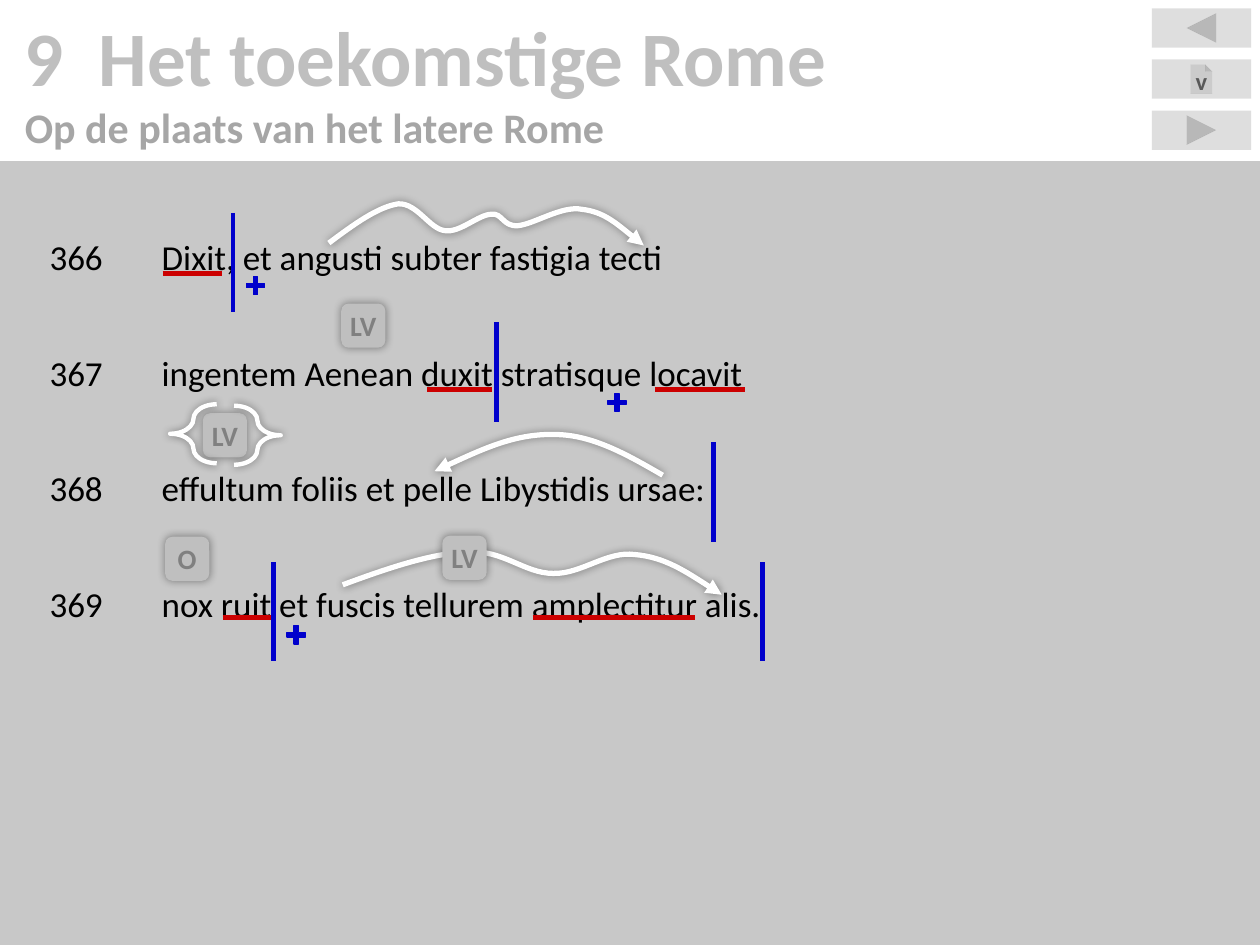
from lxml.etree import SubElement
from pptx import Presentation
from pptx.dml.color import RGBColor
from pptx.enum.shapes import MSO_CONNECTOR, MSO_SHAPE
from pptx.enum.text import MSO_ANCHOR, PP_ALIGN
from pptx.oxml.ns import qn
from pptx.util import Cm, Pt

COLORS = {
    "grey": "BFBFBF", "subtitle": "A6A6A6", "badge_text": "808080",
    "button_text": "595959", "verb": "CC0000", "clause": "0000CC",
    "white": "FFFFFF", "black": "000000",
}
VERSES = [
    "366\tDixit, et angusti subter fastigia tecti",
    "367\tingentem Aenean duxit stratisque locavit",
    "368\teffultum foliis et pelle Libystidis ursae:",
    "369\tnox ruit et fuscis tellurem amplectitur alis.",
]
# left, right, height on the slide
VERB_UNDERLINES = [(3.28, 4.47, 5.51), (8.61, 9.91, 7.85), (13.21, 15.01, 7.85),
                   (4.5, 5.51, 12.45), (10.74, 14.02, 12.45)]
CLAUSE_BARS = [(4.7, 4.29), (10.01, 6.5), (14.38, 8.92), (5.51, 11.33), (15.37, 11.33)]
PLUS_SIGNS = [(4.9, 5.51), (12.19, 7.87), (5.72, 12.55)]
BADGES = [("LV", 6.88, 6.12), ("LV", 4.09, 8.33), ("O", 3.33, 10.82), ("LV", 8.92, 10.8)]
# a start point, then two control points and an end point for each curve
ARROWS = [
    [(6.63, 4.9), (7.14, 4.52), (7.62, 4.17), (8.03, 4.11),
     (8.41, 4.09), (8.66, 4.62), (8.97, 4.65), (9.27, 4.7), (9.65, 4.32), (9.91, 4.32),
     (10.13, 4.29), (10.13, 4.57), (10.44, 4.55), (10.77, 4.52), (11.33, 4.14),
     (11.73, 4.22), (12.17, 4.27), (12.57, 4.62), (12.98, 4.95)],
    [(13.36, 9.58), (12.65, 9.17), (11.94, 8.76), (11.18, 8.76),
     (10.39, 8.74), (9.58, 9.12), (8.76, 9.5)],
    [(6.91, 11.79), (7.8, 11.46), (8.71, 11.15), (9.42, 11.13),
     (10.13, 11.07), (10.57, 11.56), (11.15, 11.56), (11.71, 11.58), (12.24, 11.1),
     (12.8, 11.18), (13.39, 11.23), (13.97, 11.61), (14.55, 11.99)],
]


def rgb(name):
    return RGBColor.from_string(COLORS[name])


def set_frame(shape, anchor=MSO_ANCHOR.TOP, horizontal=0.0, vertical=0.0):
    frame = shape.text_frame
    frame.word_wrap = True
    frame.vertical_anchor = anchor
    frame.margin_left = frame.margin_right = Cm(horizontal)
    frame.margin_top = frame.margin_bottom = Cm(vertical)


def write(shape, text, size, color, bold=False, align=PP_ALIGN.LEFT,
          space_after=None, tab=None, hanging=None):
    """Write text as the next paragraph of the shape."""
    frame = shape.text_frame
    paragraph = frame.paragraphs[0] if not frame.text else frame.add_paragraph()
    properties = paragraph._p.get_or_add_pPr()
    if tab:
        tabs = SubElement(properties, qn("a:tabLst"))
        SubElement(tabs, qn("a:tab"), pos=str(Cm(tab)), algn="l")
    if hanging:
        properties.set("marL", str(Cm(hanging)))
        properties.set("indent", str(-Cm(hanging)))
    paragraph.alignment = align
    if space_after:
        paragraph.space_after = Pt(space_after)
    run = paragraph.add_run()
    run.text = text
    run.font.name = "Calibri"
    run.font.size = Pt(size)
    run.font.bold = bold
    run.font.color.rgb = rgb(color)


def add_glow(shape):
    """Give the shape a soft black shadow without offset."""
    effects = shape._element.spPr.find(qn("a:effectLst"))
    shadow = SubElement(effects, qn("a:outerShdw"), blurRad=str(Pt(5)), dist="0", dir="0",
                        algn="ctr", rotWithShape="0")
    color = SubElement(shadow, qn("a:srgbClr"), val=COLORS["black"])
    SubElement(color, qn("a:alpha"), val="40000")


def style_shape(shape, fill=None, opacity=100, line=None, line_width=0.0, glow=False):
    shape.shadow.inherit = False
    if fill:
        shape.fill.solid()
        shape.fill.fore_color.rgb = rgb(fill)
        if opacity < 100:
            color = shape._element.spPr.find(".//" + qn("a:srgbClr"))
            SubElement(color, qn("a:alpha"), val=str(opacity * 1000))
    else:
        shape.fill.background()
    if line:
        shape.line.color.rgb = rgb(line)
        shape.line.width = Pt(line_width)
    else:
        shape.line.fill.background()
    if glow:
        add_glow(shape)


def add_figure(slide, kind, left, top, width, height, **style):
    shape = slide.shapes.add_shape(kind, Cm(left), Cm(top), Cm(width), Cm(height))
    style_shape(shape, **style)
    return shape


def add_line(slide, left, top, right, bottom, color):
    line = slide.shapes.add_connector(
        MSO_CONNECTOR.STRAIGHT, Cm(left), Cm(top), Cm(right), Cm(bottom))
    line.line.color.rgb = rgb(color)
    line.line.width = Pt(2.5)
    SubElement(line._element.spPr, qn("a:effectLst"))


def add_curved_arrow(slide, points):
    """Draw a chain of Bezier curves that ends in an arrowhead."""
    places = [(Cm(x), Cm(y)) for x, y in points]
    builder = slide.shapes.build_freeform(*places[0])
    builder.add_line_segments(places[1:], close=False)
    shape = builder.convert_to_shape()
    outline = shape._element.spPr.find(".//" + qn("a:path"))
    segments = outline.findall(qn("a:lnTo"))
    for start in range(0, len(segments), 3):
        curve = SubElement(outline, qn("a:cubicBezTo"))
        for segment in segments[start:start + 3]:
            curve.append(segment[0])
            outline.remove(segment)
    style_shape(shape, line="white", line_width=3, glow=True)
    SubElement(shape._element.spPr.find(qn("a:ln")), qn("a:tailEnd"), type="triangle")


def add_header(slide):
    header = slide.shapes.add_textbox(0, 0, Cm(25.4), Cm(3.25))
    set_frame(header, MSO_ANCHOR.MIDDLE, 0.5, 0.5)
    write(header, "9  Het toekomstige Rome", 44, "grey", bold=True, hanging=1.7)
    write(header, "Op de plaats van het latere Rome", 24, "subtitle", bold=True, hanging=1.7)


def add_verses(slide):
    panel = add_figure(slide, MSO_SHAPE.RECTANGLE, 0, 3.25, 25.4, 15.8,
                       fill="grey", opacity=85)
    set_frame(panel, horizontal=1, vertical=1.5)
    for verse in VERSES:
        write(panel, verse, 20, "black", space_after=42, tab=2.26)


def add_buttons(slide):
    kinds = [MSO_SHAPE.ACTION_BUTTON_BACK_OR_PREVIOUS, MSO_SHAPE.ACTION_BUTTON_DOCUMENT,
             MSO_SHAPE.ACTION_BUTTON_FORWARD_OR_NEXT]
    buttons = [add_figure(slide, kind, 23.22, 0.17 + 1.03 * row, 2, 0.79,
                          fill="grey", opacity=50)
               for row, kind in enumerate(kinds)]
    set_frame(buttons[1], horizontal=0.25, vertical=0.13)
    write(buttons[1], "v", 14, "button_text", bold=True, align=PP_ALIGN.CENTER)


def add_badge(slide, text, left, top):
    badge = add_figure(slide, MSO_SHAPE.ROUNDED_RECTANGLE, left, top, 0.89, 0.89,
                       fill="grey", glow=True)
    set_frame(badge, MSO_ANCHOR.MIDDLE)
    write(badge, text, 16, "badge_text", bold=True, align=PP_ALIGN.CENTER)


def add_brace(slide, left, top, flipped=False):
    brace = add_figure(slide, MSO_SHAPE.LEFT_BRACE, left, top, 0.94, 1.19,
                       line="white", line_width=2.5, glow=True)
    brace.adjustments[0] = 0.35
    if flipped:
        brace._element.spPr.xfrm.set("flipH", "1")


def main():
    presentation = Presentation()
    presentation.slide_width, presentation.slide_height = Cm(25.4), Cm(19.05)
    slide = presentation.slides.add_slide(presentation.slide_layouts[6])
    add_header(slide)
    add_verses(slide)
    add_buttons(slide)
    for left, right, level in VERB_UNDERLINES:
        add_line(slide, left, level, right, level, "verb")
    for left, top in CLAUSE_BARS:
        add_line(slide, left, top, left, top + 2, "clause")
    for left, top in PLUS_SIGNS:
        plus = add_figure(slide, MSO_SHAPE.MATH_PLUS, left, top, 0.5, 0.5,
                          fill="clause", line="clause")
        plus.adjustments[0] = 0.17
    for points in ARROWS:
        add_curved_arrow(slide, points)
    for text, left, top in BADGES:
        add_badge(slide, text, left, top)
    add_brace(slide, 3.43, 8.15)
    add_brace(slide, 4.72, 8.18, flipped=True)
    presentation.save("out.pptx")


if __name__ == "__main__":
    main()
